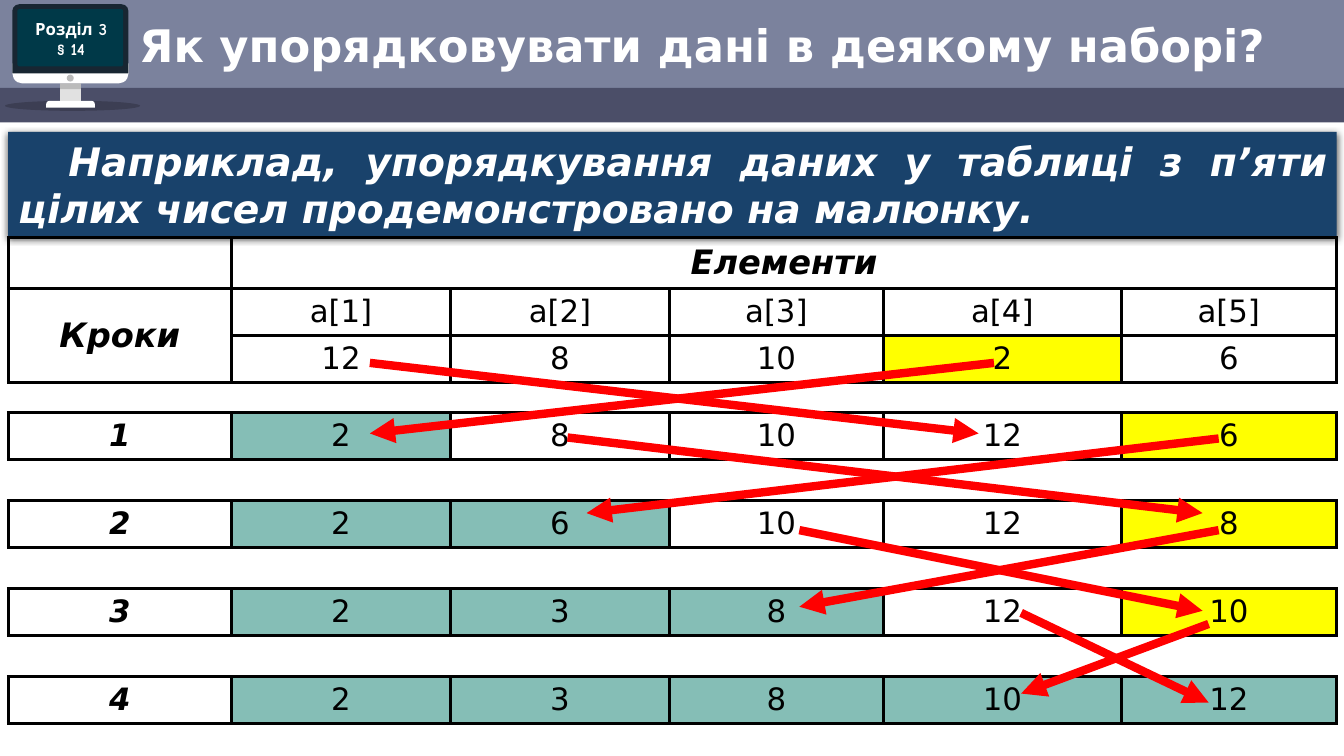
from dataclasses import dataclass

from lxml.etree import SubElement
from pptx import Presentation
from pptx.dml.color import RGBColor
from pptx.enum.shapes import MSO_CONNECTOR as Connector, MSO_SHAPE as Shape
from pptx.enum.text import MSO_ANCHOR as Anchor, PP_ALIGN as Align
from pptx.oxml import parse_xml
from pptx.oxml.ns import nsdecls, qn
from pptx.util import Pt


@dataclass(frozen=True)
class Theme:
    font: str = "DejaVu Sans"
    badge_font: str = "Comic Neue"
    white: str = "FFFFFF"
    black: str = "000000"
    header: str = "7B829D"
    header_strip: str = "4B4E68"
    banner: str = "19426B"
    bezel: str = "182632"
    screen: str = "003948"
    stand: str = "E1E1E1"
    grey: str = "BBBBBB"
    placed: str = "85BEB6"
    minimum: str = "FFFF00"
    arrow: str = "FF0000"
    title_size: int = 32
    banner_size: int = 28
    heading_size: int = 24
    cell_size: int = 22
    badge_size: int = 12
    border: float = 2.25
    arrow_width: int = 6


class SlideBuilder:
    def __init__(self, page, theme):
        self.page = page
        self.theme = theme

    def shape(self, kind, left, top, width, height, color, alpha=None, adjust=None, turn=0):
        box = self.page.shapes.add_shape(kind, Pt(left), Pt(top), Pt(width), Pt(height))
        box.shadow.inherit = False
        box.fill.solid()
        box.fill.fore_color.rgb = RGBColor.from_string(color)
        box.line.fill.background()
        box.rotation = turn
        if adjust is not None:
            box.adjustments[0] = adjust
        if alpha is not None:
            tint = box._element.spPr.find(qn("a:solidFill"))[0]
            SubElement(tint, qn("a:alpha"), val=str(alpha * 1000))
        return box

    def textbox(self, left, top, width, height):
        box = self.page.shapes.add_textbox(Pt(left), Pt(top), Pt(width), Pt(height))
        box.text_frame.word_wrap = True
        box.text_frame.vertical_anchor = Anchor.MIDDLE
        return box

    def span(self, para, text, size, color, align=Align.LEFT, bold=False, italic=False, font=None):
        para.alignment = align
        span = para.add_run()
        span.text = text
        span.font.name = font or self.theme.font
        span.font.size = Pt(size)
        span.font.bold = bold
        span.font.italic = italic
        span.font.color.rgb = RGBColor.from_string(color)

    def drop_shadow(self, box):
        effects = box._element.spPr.find(qn("a:effectLst"))
        effects.append(parse_xml(
            f'<a:outerShdw {nsdecls("a")} blurRad="{Pt(4.5)}" dist="{Pt(1.5)}" dir="5400000" '
            'algn="ctr" rotWithShape="0"><a:srgbClr val="000000"><a:alpha val="63000"/>'
            '</a:srgbClr></a:outerShdw>'))

    def table(self, left, top, widths, heights):
        frame = self.page.shapes.add_table(
            len(heights), len(widths), Pt(left), Pt(top), Pt(sum(widths)), Pt(sum(heights)))
        grid = frame.table
        grid.first_row = grid.horz_banding = False
        for column, width in zip(grid.columns, widths):
            column.width = Pt(width)
        for row, height in zip(grid.rows, heights):
            row.height = Pt(height)
        return grid

    def borders(self, cell, sides):
        properties = cell._tc.get_or_add_tcPr()
        for index, side in enumerate("LRTB"):
            paint = (f'<a:solidFill><a:srgbClr val="{self.theme.black}"/></a:solidFill>'
                     if side in sides else "<a:noFill/>")
            properties.insert(index, parse_xml(
                f'<a:ln{side} {nsdecls("a")} w="{Pt(self.theme.border)}">{paint}</a:ln{side}>'))

    def cell(self, cell, text="", size=None, strong=False, color=None):
        cell.vertical_anchor = Anchor.MIDDLE
        if color:
            cell.fill.solid()
            cell.fill.fore_color.rgb = RGBColor.from_string(color)
        else:
            cell.fill.background()
        para = cell.text_frame.paragraphs[0]
        if text:
            self.span(para, text, size or self.theme.cell_size, self.theme.black,
                      Align.CENTER, strong, strong)
        else:
            # Small type keeps empty rows from growing
            SubElement(para._p, qn("a:endParaRPr"), sz="800")

    def arrow(self, start, end):
        line = self.page.shapes.add_connector(
            Connector.STRAIGHT, *(Pt(value) for value in (*start, *end)))
        line.line.color.rgb = RGBColor.from_string(self.theme.arrow)
        line.line.width = Pt(self.theme.arrow_width)
        properties = line._element.spPr
        SubElement(properties.find(qn("a:ln")), qn("a:tailEnd"), type="triangle")
        SubElement(properties, qn("a:effectLst"))


def main():
    deck = Presentation()
    deck.slide_width, deck.slide_height = Pt(960), Pt(540)
    page = deck.slides.add_slide(deck.slide_layouts[6])
    theme = Theme()
    build = SlideBuilder(page, theme)

    # Header bands
    build.shape(Shape.RECTANGLE, 0, 0, 960, 65.5, theme.header)
    build.shape(Shape.RECTANGLE, 0, 62.8, 960, 24.6, theme.header_strip)

    # Computer with the section number
    build.shape(Shape.OVAL, 3.6, 72, 96.5, 7.2, theme.black, alpha=20)
    build.shape(Shape.ROUND_2_SAME_RECTANGLE, 8.8, 45.2, 83, 14.4, theme.white, adjust=0.5, turn=180)
    build.shape(Shape.ROUND_2_SAME_RECTANGLE, 8.8, 3, 83, 49.4, theme.bezel, adjust=0.1)
    build.shape(Shape.RECTANGLE, 43, 59.6, 14.8, 12.4, theme.stand)
    build.shape(Shape.RECTANGLE, 43, 59.6, 14.8, 4, theme.grey)
    build.shape(Shape.ROUND_2_SAME_RECTANGLE, 33, 72, 34.8, 5, theme.white, adjust=0.5)
    build.shape(Shape.OVAL, 47.7, 53.3, 5, 5, theme.grey)
    build.shape(Shape.ROUNDED_RECTANGLE, 12.4, 6.5, 75.6, 41, theme.screen, adjust=0.04)
    frame = build.textbox(9.4, 6.5, 82.8, 42.5).text_frame
    for para, text in ((frame.paragraphs[0], "Розділ 3"), (frame.add_paragraph(), "§ 14")):
        build.span(para, text, theme.badge_size, theme.white, Align.CENTER, True,
                   font=theme.badge_font)

    # Title
    para = build.textbox(92.2, 13, 843.8, 41.8).text_frame.paragraphs[0]
    para.line_spacing = 0.9
    build.span(para, "Як упорядковувати дані в деякому наборі?", theme.title_size,
               theme.white, bold=True)

    # Banner
    banner = build.shape(Shape.RECTANGLE, 5.8, 94.3, 949, 74.9, theme.banner)
    build.drop_shadow(banner)
    banner.text_frame.word_wrap = True
    banner.text_frame.vertical_anchor = Anchor.TOP
    para = banner.text_frame.paragraphs[0]
    build.span(para, "Наприклад, упорядкування даних у таблиці з п’яти цілих чисел "
               "продемонстровано на малюнку.", theme.banner_size, theme.white,
               Align.JUSTIFY, True, True)
    para._p.get_or_add_pPr().set("indent", str(Pt(36)))

    # Sorting table: three heading rows, then a gap row before each step
    heights = [36.4, 33.6, 33.6, 21.6, 33.6] + [29.2, 33.6] * 3
    grid = build.table(5.8, 169.6, [159.6, 156.4, 156.4, 152.8, 170, 153.6], heights)
    names = [f"a[{number}]" for number in range(1, 6)]
    states = [(12, 8, 10, 2, 6), (2, 8, 10, 12, 6), (2, 6, 10, 12, 8),
              (2, 3, 8, 12, 10), (2, 3, 8, 10, 12)]
    minimum_columns = [4, 5, 5, 5, None]
    rows = {0: ["", "Елементи", "", "", "", ""], 1: ["Кроки", *names], 2: ["", *states[0]]}
    rows |= {2 + 2 * step: [step, *states[step]] for step in range(1, 5)}
    for row in range(len(heights)):
        step = (row - 2) // 2
        for column in range(6):
            text = str(rows[row][column]) if row in rows else ""
            color = None
            if row in rows and row >= 2 and column:
                if column <= step or step == 4:
                    color = theme.placed
                elif column == minimum_columns[step]:
                    color = theme.minimum
            heading = row == 0 or (row == 1 and column == 0)
            build.cell(grid.cell(row, column), text, theme.heading_size if heading else None,
                       heading or column == 0, color)
            build.borders(grid.cell(row, column), "LRTB" if row in rows else "TB")
    grid.cell(0, 1).merge(grid.cell(0, 5))
    grid.cell(1, 0).merge(grid.cell(2, 0))

    # Swaps: the minimum moves left, the displaced value moves right
    for start, end in (
        ((710, 259.2), (264.2, 309.6)), ((264.2, 259.2), (699, 309.6)),
        ((870.5, 313.2), (419, 366.5)), ((405.4, 312.5), (859, 366.5)),
        ((870.5, 378.7), (571, 433.4)), ((571, 378.7), (859, 436.3)),
        ((863.3, 445.7), (729.4, 495.4)), ((729.4, 437.8), (863.3, 501.8)),
    ):
        build.arrow(start, end)

    deck.save("out.pptx")


if __name__ == "__main__":
    main()
